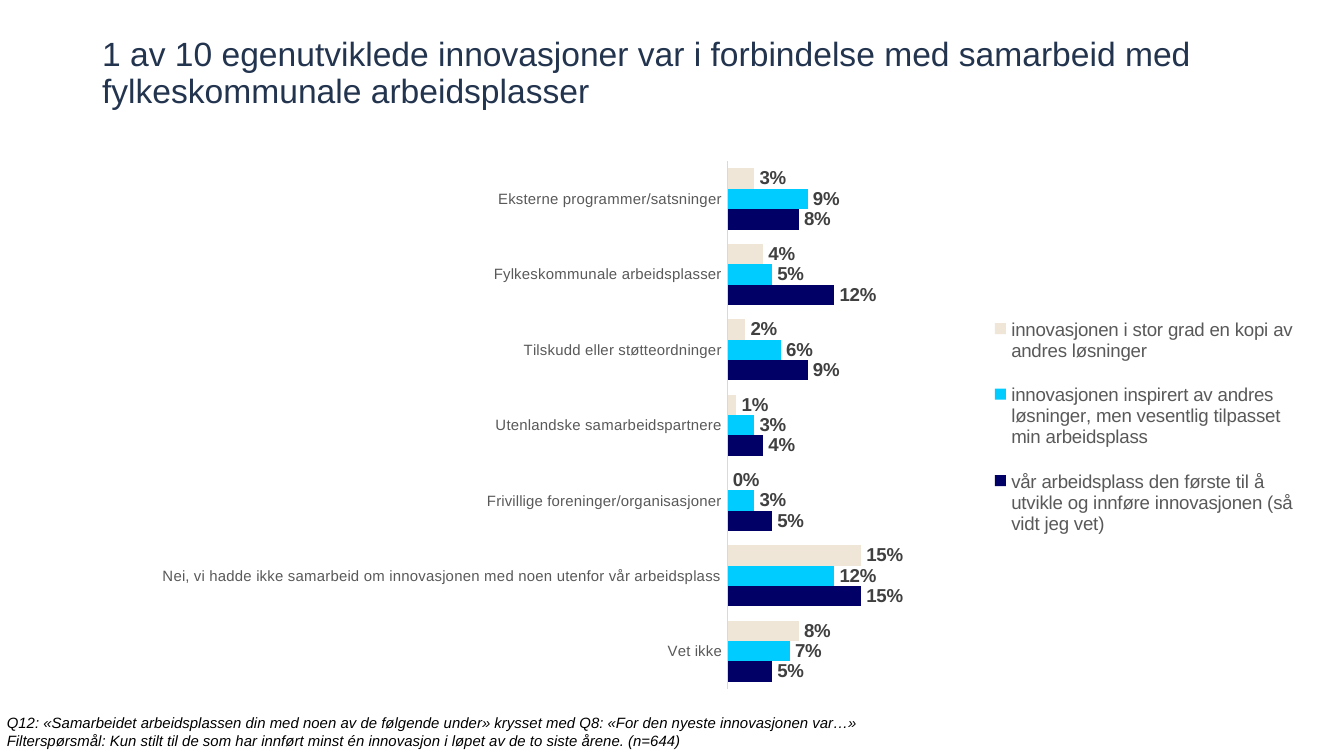
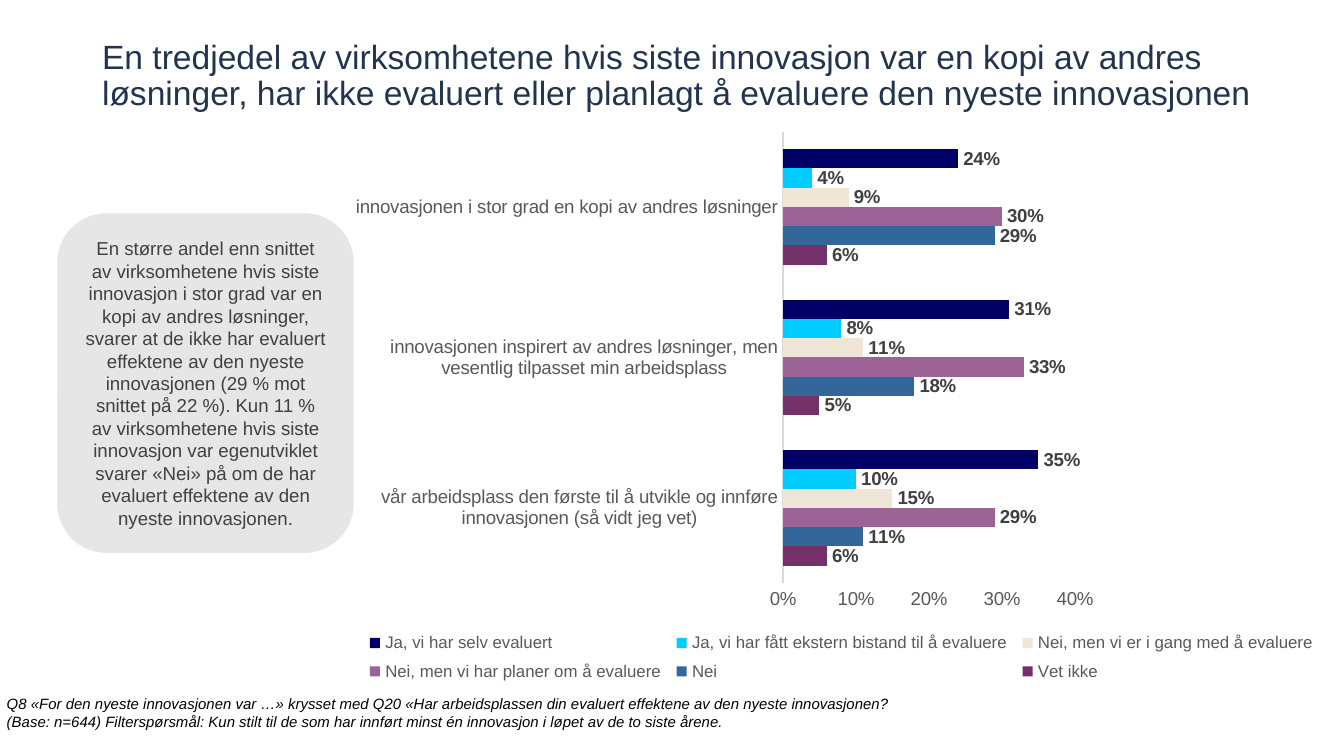
from lxml import etree
from pptx import Presentation
from pptx.chart.data import CategoryChartData
from pptx.dml.color import RGBColor
from pptx.enum.chart import XL_CHART_TYPE as ChartType
from pptx.enum.chart import XL_LABEL_POSITION as LabelPosition
from pptx.enum.chart import XL_LEGEND_POSITION as LegendPosition
from pptx.enum.chart import XL_TICK_MARK as TickMark
from pptx.enum.shapes import MSO_SHAPE as Shape
from pptx.enum.text import MSO_ANCHOR as Anchor
from pptx.enum.text import MSO_AUTO_SIZE as AutoSize
from pptx.enum.text import PP_ALIGN as Align
from pptx.oxml.ns import qn
from pptx.util import Pt

FONT = "Arial"
COLORS = {
    "title": "23344F", "black": "000000", "label": "404040", "axis": "595959",
    "line": "D9D9D9", "callout": "E7E6E6", "white": "FFFFFF",
    "navy": "000066", "cyan": "00CCFF", "sand": "F0E6D8",
    "lilac": "9B6396", "blue": "336699", "plum": "743068",
}

FIRST = "vår arbeidsplass den første til å utvikle og innføre innovasjonen (så vidt jeg vet)"
INSPIRED = "innovasjonen inspirert av andres løsninger, men vesentlig tilpasset min arbeidsplass"
COPIED = "innovasjonen i stor grad en kopi av andres løsninger"

SLIDES = [
    {
        "title": "1 av 10 egenutviklede innovasjoner var i forbindelse med samarbeid med "
                 "fylkeskommunale arbeidsplasser",
        "title_at": (54.7, 35.3, 658.8, 23.8),
        "footer": [
            "Q12: «Samarbeidet arbeidsplassen din med noen av de følgende under» krysset med "
            "Q8: «For den nyeste innovasjonen var…»",
            "Filterspørsmål: Kun stilt til de som har innført minst én innovasjon i løpet av "
            "de to siste årene. (n=644)",
        ],
        "footer_at": (2.9, 382.3, 462.2, 19.4),
        "footer_wrap": False,
        "chart": {
            "at": (18, 75.6, 681, 319),
            "categories": [
                "Vet ikke",
                "Nei, vi hadde ikke samarbeid om innovasjonen med noen utenfor vår arbeidsplass",
                "Frivillige foreninger/organisasjoner",
                "Utenlandske samarbeidspartnere",
                "Tilskudd eller støtteordninger",
                "Fylkeskommunale arbeidsplasser",
                "Eksterne programmer/satsninger",
            ],
            "series": [
                (FIRST, "navy", (0.05, 0.15, 0.05, 0.04, 0.09, 0.12, 0.08)),
                (INSPIRED, "cyan", (0.07, 0.12, 0.03, 0.03, 0.06, 0.05, 0.09)),
                (COPIED, "sand", (0.08, 0.15, 0, 0.01, 0.02, 0.04, 0.03)),
            ],
            "gap": 70, "category_size": 8, "scale": (-0.1, 0.6), "show_values": False,
            "plot": (0.476, 0.034, 0.49, 0.886),
            "legend": (LegendPosition.RIGHT, 10, (0.763, 0.26, 0.237, 0.44)),
        },
    },
    {
        "title": "En tredjedel av virksomhetene hvis siste innovasjon var en kopi av andres "
                 "løsninger, har ikke evaluert eller planlagt å evaluere den nyeste innovasjonen",
        "title_at": (54.7, 36.7, 635.8, 23.8),
        "footer": [
            "Q8 «For den nyeste innovasjonen var …» krysset med Q20 «Har arbeidsplassen din "
            "evaluert effektene av den nyeste innovasjonen?",
            "(Base: n=644) Filterspørsmål: Kun stilt til de som har innført minst én "
            "innovasjon i løpet av de to siste årene.",
        ],
        "footer_at": (2.9, 372.2, 648, 19.4),
        "footer_wrap": True,
        "chart": {
            "at": (190.1, 59, 521.3, 320.4),
            "categories": [FIRST, INSPIRED, COPIED],
            "series": [
                ("Vet ikke", "plum", (0.06, 0.05, 0.06)),
                ("Nei", "blue", (0.11, 0.18, 0.29)),
                ("Nei, men vi har planer om å evaluere", "lilac", (0.29, 0.33, 0.3)),
                ("Nei, men vi er i gang med å evaluere", "sand", (0.15, 0.11, 0.09)),
                ("Ja, vi har fått ekstern bistand til å evaluere", "cyan", (0.1, 0.08, 0.04)),
                ("Ja, vi har selv evaluert", "navy", (0.35, 0.31, 0.24)),
            ],
            "gap": 182, "category_size": 10, "scale": (0, 0.4), "show_values": True,
            "plot": (0.44, 0.036, 0.3, 0.755),
            "legend": (LegendPosition.BOTTOM, 9, (0.005, 0.86, 0.99, 0.11)),
        },
        "callout": "En større andel enn snittet av virksomhetene hvis siste innovasjon i stor grad "
                   "var en kopi av andres løsninger, svarer at de ikke har evaluert effektene av "
                   "den nyeste innovasjonen (29 % mot snittet på 22 %). Kun 11 % av virksomhetene "
                   "hvis siste innovasjon var egenutviklet svarer «Nei» på om de har evaluert "
                   "effektene av den nyeste innovasjonen.",
        "callout_at": (30.2, 113.8, 159.8, 182.9),
    },
]


def color(name):
    return RGBColor.from_string(COLORS[name])


def style_font(font, size, name, bold=False, italic=False):
    font.name = FONT
    font.size = Pt(size)
    font.bold = bold
    font.italic = italic
    font.color.rgb = color(name)


def write_text(box, paragraphs, size, name, italic=False, align=Align.LEFT,
               anchor=Anchor.TOP, spacing=None, inset=None, wrap=True, indent=0):
    frame = box.text_frame
    frame.word_wrap = wrap
    frame.vertical_anchor = anchor
    if inset is not None:
        frame.margin_left = frame.margin_right = Pt(inset)
        frame.margin_top = frame.margin_bottom = Pt(inset)
    for index, text in enumerate(paragraphs):
        para = frame.add_paragraph() if index else frame.paragraphs[0]
        para.alignment = align
        if spacing:
            para.line_spacing = spacing
        if indent:
            para._p.get_or_add_pPr().set("marL", str(Pt(indent)))
        span = para.add_run()
        span.text = text
        style_font(span.font, size, name, italic=italic)


def make_layout(bounds, inner=False):
    layout = etree.Element(qn("c:layout"))
    manual = etree.SubElement(layout, qn("c:manualLayout"))
    settings = [("layoutTarget", "inner")] if inner else []
    settings += [("xMode", "edge"), ("yMode", "edge")]
    settings += zip("xywh", bounds)
    for tag, value in settings:
        etree.SubElement(manual, qn(f"c:{tag}")).set("val", str(value))
    return layout


def clear_layout(parent):
    for layout in parent.findall(qn("c:layout")):
        parent.remove(layout)


def add_bar_chart(page, details):
    data = CategoryChartData(number_format="0%")
    data.categories = details["categories"]
    for name, _, values in details["series"]:
        data.add_series(name, values)
    chart = page.shapes.add_chart(
        ChartType.BAR_CLUSTERED, *map(Pt, details["at"]), data).chart
    chart.has_title = False
    style_font(chart.font, 10, "black")

    plot = chart.plots[0]
    plot.gap_width = details["gap"]
    plot.overlap = 0
    plot.vary_by_categories = False
    for series, (_, fill, _) in zip(plot.series, details["series"]):
        series.invert_if_negative = False
        series.format.fill.solid()
        series.format.fill.fore_color.rgb = color(fill)
        labels = series.data_labels
        labels.show_value = True
        labels.position = LabelPosition.OUTSIDE_END
        labels.number_format = "0%"
        labels.number_format_is_linked = False
        style_font(labels.font, 10, "label", bold=True)

    category_axis, value_axis = chart.category_axis, chart.value_axis
    for axis, size in ((category_axis, details["category_size"]), (value_axis, 10)):
        axis.major_tick_mark = axis.minor_tick_mark = TickMark.NONE
        axis.has_major_gridlines = False
        style_font(axis.tick_labels.font, size, "axis")
    category_axis.format.line.color.rgb = color("line")
    category_axis.format.line.width = Pt(0.75)
    value_axis.minimum_scale, value_axis.maximum_scale = details["scale"]
    value_axis.major_unit = 0.1
    value_axis.tick_labels.number_format = "0%"
    value_axis.tick_labels.number_format_is_linked = False
    value_axis.format.line.fill.background()
    value_axis.visible = details["show_values"]

    position, size, bounds = details["legend"]
    chart.has_legend = True
    legend = chart.legend
    legend.position = position
    legend.include_in_layout = False
    style_font(legend.font, size, "axis")
    clear_layout(legend._element)
    legend._element.find(qn("c:legendPos")).addnext(make_layout(bounds))

    plot_area = chart._chartSpace.chart.plotArea
    clear_layout(plot_area)
    plot_area.insert(0, make_layout(details["plot"], inner=True))


def add_callout(page, text, at):
    box = page.shapes.add_shape(Shape.ROUNDED_RECTANGLE, *map(Pt, at))
    box.shadow.inherit = False
    box.fill.solid()
    box.fill.fore_color.rgb = color("callout")
    box.line.color.rgb = color("white")
    box.line.width = Pt(1)
    write_text(box, [text], 10, "label", align=Align.CENTER, anchor=Anchor.MIDDLE)


def build_slide(deck, content):
    page = deck.slides.add_slide(deck.slide_layouts[6])
    title = page.shapes.add_textbox(*map(Pt, content["title_at"]))
    write_text(title, [content["title"]], 18, "title",
               anchor=Anchor.BOTTOM, spacing=0.9, inset=0)
    footer = page.shapes.add_textbox(*map(Pt, content["footer_at"]))
    write_text(footer, content["footer"], 8, "black", italic=True,
               inset=0, wrap=content["footer_wrap"], indent=0.75)
    footer.text_frame.auto_size = AutoSize.SHAPE_TO_FIT_TEXT
    add_bar_chart(page, content["chart"])
    if "callout" in content:
        add_callout(page, content["callout"], content["callout_at"])


def main():
    deck = Presentation()
    deck.slide_width, deck.slide_height = Pt(720), Pt(405)
    for content in SLIDES:
        build_slide(deck, content)
    deck.save("out.pptx")


if __name__ == "__main__":
    main()
